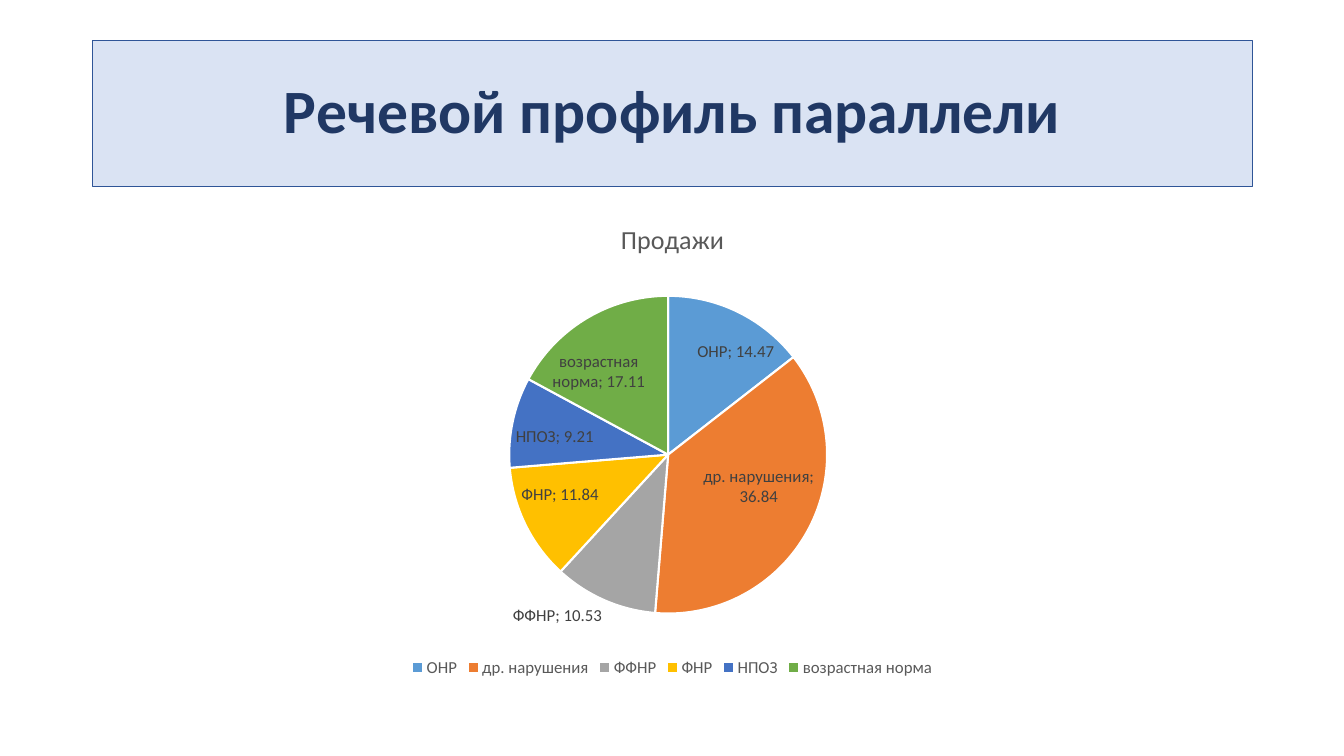
"""Build a slide with a speech profile pie chart."""
from lxml import etree
from pptx import Presentation
from pptx.chart.data import CategoryChartData
from pptx.dml.color import RGBColor
from pptx.enum.chart import XL_CHART_TYPE, XL_LABEL_POSITION, XL_LEGEND_POSITION
from pptx.enum.text import MSO_ANCHOR, PP_ALIGN
from pptx.oxml.ns import qn
from pptx.util import Inches, Pt

PIE = XL_CHART_TYPE.PIE
BEST_FIT = XL_LABEL_POSITION.BEST_FIT
BOTTOM = XL_LEGEND_POSITION.BOTTOM
MIDDLE = MSO_ANCHOR.MIDDLE
CENTER = PP_ALIGN.CENTER

TITLE = "Речевой профиль параллели"
CHART_TITLE = "Продажи"
SLICES = [
    ("ОНР", 14.47, "5B9BD5"),
    ("др. нарушения", 36.84, "ED7D31"),
    ("ФФНР", 10.53, "A5A5A5"),
    ("ФНР", 11.84, "FFC000"),
    ("НПОЗ", 9.21, "4472C4"),
    ("возрастная норма", 17.11, "70AD47"),
]
FONT = "Calibri"
LEFT, WIDTH = 0.92, 11.5


def rgb(value):
    return RGBColor.from_string(value)


def style_font(font, size, color, bold=False):
    font.name = FONT
    font.size = Pt(size)
    font.bold = bold
    font.color.rgb = rgb(color)


def add_title(slide):
    sp = slide.shapes.title
    sp.left, sp.top = Inches(LEFT), Inches(0.4)
    sp.width, sp.height = Inches(WIDTH), Inches(1.45)
    sp.fill.solid()
    sp.fill.fore_color.rgb = rgb("DAE3F3")
    sp.line.color.rgb = rgb("2F5597")
    sp.line.width = Pt(0.75)
    tf = sp.text_frame
    tf.text = TITLE
    tf.vertical_anchor = MIDDLE
    p = tf.paragraphs[0]
    p.alignment = CENTER
    p.line_spacing = 0.9
    style_font(p.runs[0].font, 44, "203864", True)


def add_pie(slide):
    data = CategoryChartData()
    data.categories = [name for name, _, _ in SLICES]
    data.add_series(CHART_TITLE, [value for _, value, _ in SLICES])
    chart = slide.shapes.add_chart(
        PIE, Inches(LEFT), Inches(2), Inches(WIDTH), Inches(4.76), data).chart
    style_font(chart.font, 10, "000000")

    chart.has_title = True
    tf = chart.chart_title.text_frame
    tf.text = CHART_TITLE
    style_font(tf.paragraphs[0].runs[0].font, 18.6, "595959")
    chart.chart_title.include_in_layout = False

    chart.has_legend = True
    chart.legend.position = BOTTOM
    chart.legend.include_in_layout = False
    style_font(chart.legend.font, 12, "595959")

    plot = chart.plots[0]
    plot.vary_by_categories = True
    series = plot.series[0]
    for i, (_, _, color) in enumerate(SLICES):
        fmt = series.points[i].format
        fmt.fill.solid()
        fmt.fill.fore_color.rgb = rgb(color)
        fmt.line.color.rgb = rgb("FFFFFF")
        fmt.line.width = Pt(1.5)

    labels = series.data_labels
    labels.show_value = True
    labels.show_category_name = True
    labels.position = BEST_FIT
    style_font(labels.font, 12, "404040")
    separator = etree.Element(qn("c:separator"))
    separator.text = "; "
    bubble = series.format._element.find(".//" + qn("c:showBubbleSize")) \
        if hasattr(series.format, "_element") else \
        chart._chartSpace.find(".//" + qn("c:showBubbleSize"))
    bubble.addnext(separator)


def main():
    prs = Presentation()
    prs.slide_width, prs.slide_height = Inches(13.33), Inches(7.5)
    slide = prs.slides.add_slide(prs.slide_layouts[5])
    add_title(slide)
    add_pie(slide)
    prs.save("out.pptx")


if __name__ == "__main__":
    main()
